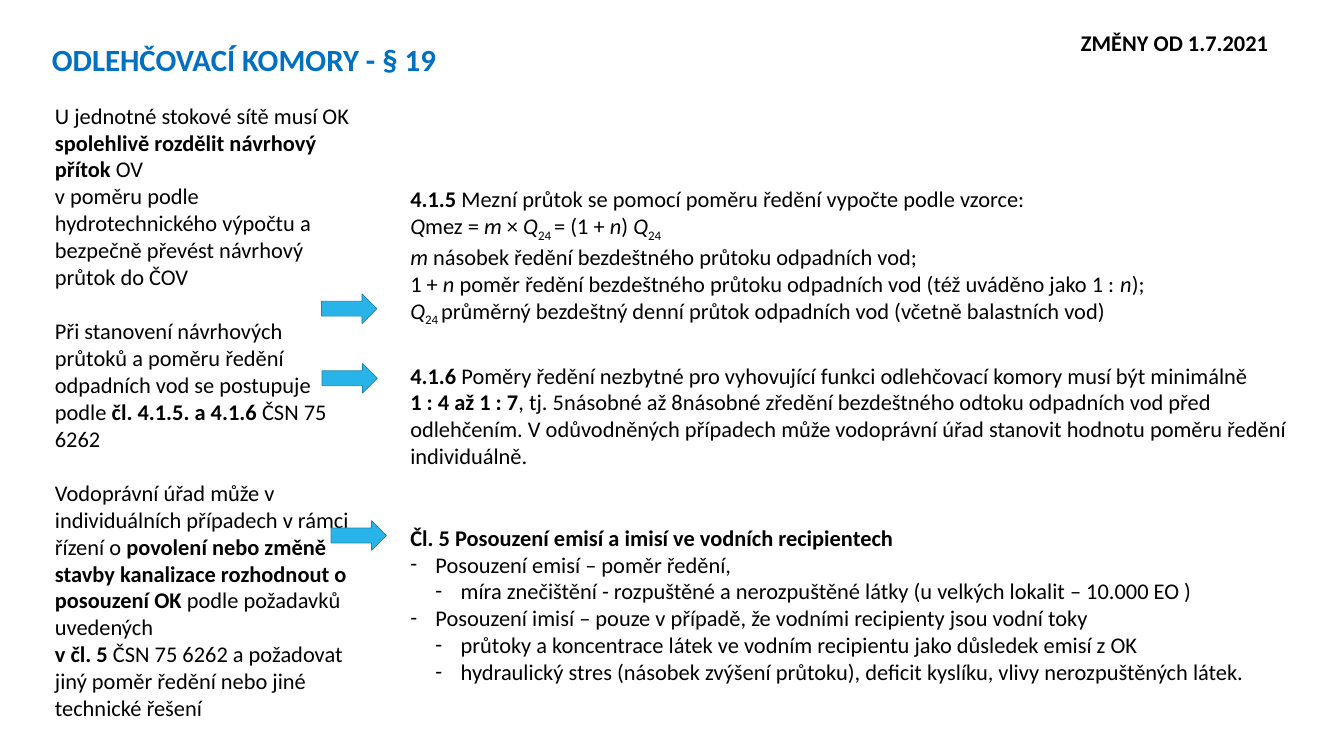
from lxml import etree
from pptx import Presentation
from pptx.dml.color import RGBColor
from pptx.enum.shapes import MSO_SHAPE
from pptx.enum.text import MSO_ANCHOR, MSO_AUTO_SIZE, PP_ALIGN
from pptx.oxml.ns import qn
from pptx.util import Inches, Pt

RIGHT_ARROW = MSO_SHAPE.RIGHT_ARROW
TOP = MSO_ANCHOR.TOP
NO_AUTOFIT = MSO_AUTO_SIZE.NONE
LEFT = PP_ALIGN.LEFT

BLACK = RGBColor(0x00, 0x00, 0x00)
TITLE_BLUE = RGBColor(0x00, 0x70, 0xC0)
ARROW_BLUE = RGBColor(0x29, 0xB4, 0xE9)
ARROW_EDGE = RGBColor(0x1E, 0x85, 0xAC)
FONT = "Calibri"
BODY_SIZE = 32
TITLE_SIZE = 44
INDENT = Inches(0.5)
LINE_GAP = 39
WIDE_GAP = 49

presentation = Presentation()
presentation.slide_width = Inches(26.67)
presentation.slide_height = Inches(15)
column = presentation.slide_width / 100
row = presentation.slide_height / 100
slide = presentation.slides.add_slide(presentation.slide_layouts[3])
title, requirements, standard = slide.placeholders
date_label = slide.shapes.add_textbox(0, 0, column, row)


def place(shape, left, top, width, height):
    shape.left, shape.width = int(left * column), int(width * column)
    shape.top, shape.height = int(top * row), int(height * row)


def write(paragraph, runs, size, color):
    paragraph.alignment = LEFT
    for text, style in runs:
        for number, line in enumerate(text.split("\n")):
            if number:
                paragraph.add_line_break()
            if not line:
                continue
            run = paragraph.add_run()
            run.text = line
            run.font.name = FONT
            run.font.size = Pt(size)
            run.font.color.rgb = color
            run.font.bold = "b" in style
            run.font.italic = "i" in style
            if "s" in style:
                run._r.get_or_add_rPr().set("baseline", "-25000")


requirement_paragraphs = [
    (0, 0, [("U jednotné stokové sítě musí OK ", ""),
            ("spolehlivě rozdělit návrhový přítok ", "b"),
            ("OV\nv poměru podle hydrotechnického výpočtu a bezpečně převést návrhový průtok do ČOV", "")]),
    (0, LINE_GAP, [("Při stanovení návrhových průtoků a poměru ředění odpadních vod se postupuje podle ", ""),
                   ("čl. 4.1.5. a 4.1.6 ", "b"),
                   ("ČSN 75 6262", "")]),
    (0, LINE_GAP, [("Vodoprávní úřad může v individuálních případech v rámci řízení o", ""),
                   (" povolení nebo změně stavby kanalizace rozhodnout o posouzení OK", "b"),
                   (" podle požadavků uvedených\n", ""),
                   ("v čl. 5 ", "b"),
                   ("ČSN 75 6262 a požadovat jiný poměr ředění nebo jiné technické řešení", "")]),
]

standard_paragraphs = [
    (0, 0, [("4.1.5 ", "b"), ("Mezní průtok se pomocí poměru ředění vypočte podle vzorce:", "")]),
    (0, 0, [("Q", "i"), ("mez = ", ""), ("m ", "i"), ("× ", ""), ("Q", "i"), ("24 ", "s"),
            ("= (1 + ", ""), ("n", "i"), (") ", ""), ("Q", "i"), ("24", "s")]),
    (0, 0, [("m ", "i"), ("násobek ředění bezdeštného průtoku odpadních vod;", "")]),
    (0, 0, [("1 + ", ""), ("n ", "i"),
            ("poměr ředění bezdeštného průtoku odpadních vod (též uváděno jako 1 : ", ""),
            ("n", "i"), (");", "")]),
    (0, 0, [("Q", "i"), ("24 ", "s"),
            ("průměrný bezdeštný denní průtok odpadních vod (včetně balastních vod)", "")]),
    (0, WIDE_GAP, [("4.1.6 ", "b"),
                   ("Poměry ředění nezbytné pro vyhovující funkci odlehčovací komory musí být minimálně\n", ""),
                   ("1 : 4 až 1 : 7", "b"),
                   (", tj. 5násobné až 8násobné zředění bezdeštného odtoku odpadních vod před odlehčením. "
                    "V odůvodněných případech může vodoprávní úřad stanovit hodnotu poměru ředění individuálně.", "")]),
    (0, 2 * LINE_GAP, [("Čl. 5 Posouzení emisí a imisí ve vodních recipientech", "b")]),
    (1, 0, [("Posouzení emisí – poměr ředění,", "")]),
    (2, 0, [("míra znečištění - rozpuštěné a nerozpuštěné látky (u velkých lokalit – 10.000 EO )", "")]),
    (1, 0, [("Posouzení imisí – pouze v případě, že vodními recipienty jsou vodní toky", "")]),
    (2, 0, [("průtoky a koncentrace látek ve vodním recipientu jako důsledek emisí z OK", "")]),
    (2, 0, [("hydraulický stres (násobek zvýšení průtoku), deficit kyslíku, vlivy nerozpuštěných látek.", "")]),
]

place(requirements, 3.71, 13.13, 22.68, 83.27)
place(standard, 30.15, 13.33, 67.08, 76.93)
for body, paragraphs in ((requirements, requirement_paragraphs), (standard, standard_paragraphs)):
    frame = body.text_frame
    frame.word_wrap = True
    frame.auto_size = NO_AUTOFIT
    frame.vertical_anchor = TOP
    for number, (depth, gap, runs) in enumerate(paragraphs):
        paragraph = frame.add_paragraph() if number else frame.paragraphs[0]
        paragraph.level = max(depth - 1, 0)
        properties = paragraph._p.get_or_add_pPr()
        properties.set("marL", str(depth * INDENT))
        properties.set("indent", str(-INDENT if depth else 0))
        if depth:
            etree.SubElement(properties, qn("a:buFont")).set("typeface", FONT)
            etree.SubElement(properties, qn("a:buChar")).set("char", "-")
        else:
            etree.SubElement(properties, qn("a:buNone"))
        paragraph.space_before = Pt(gap)
        write(paragraph, runs, BODY_SIZE, BLACK)
standard.text_frame.margin_top = int(11.2 * row)

place(title, 3.86, 5.93, 70, 6.4)
place(date_label, 80.43, 3.8, 16.84, 6.4)
for label, text, size, color in (
    (title, "ODLEHČOVACÍ KOMORY - § 19", TITLE_SIZE, TITLE_BLUE),
    (date_label, "ZMĚNY OD 1.7.2021", BODY_SIZE, BLACK),
):
    frame = label.text_frame
    frame.word_wrap = True
    frame.auto_size = NO_AUTOFIT
    frame.vertical_anchor = TOP
    frame.margin_left = frame.margin_right = frame.margin_top = frame.margin_bottom = 0
    write(frame.paragraphs[0], [(text, "b")], size, color)
title.text_frame.paragraphs[0].line_spacing = 0.9

for left, top in ((23.92, 38.87), (23.96, 48.07), (24.63, 68.87)):
    arrow = slide.shapes.add_shape(RIGHT_ARROW, 0, 0, 0, 0)
    place(arrow, left, top, 4.12, 3.93)
    arrow.shadow.inherit = False
    arrow.fill.solid()
    arrow.fill.fore_color.rgb = ARROW_BLUE
    arrow.line.color.rgb = ARROW_EDGE
    arrow.line.width = Pt(1)

presentation.save("out.pptx")
